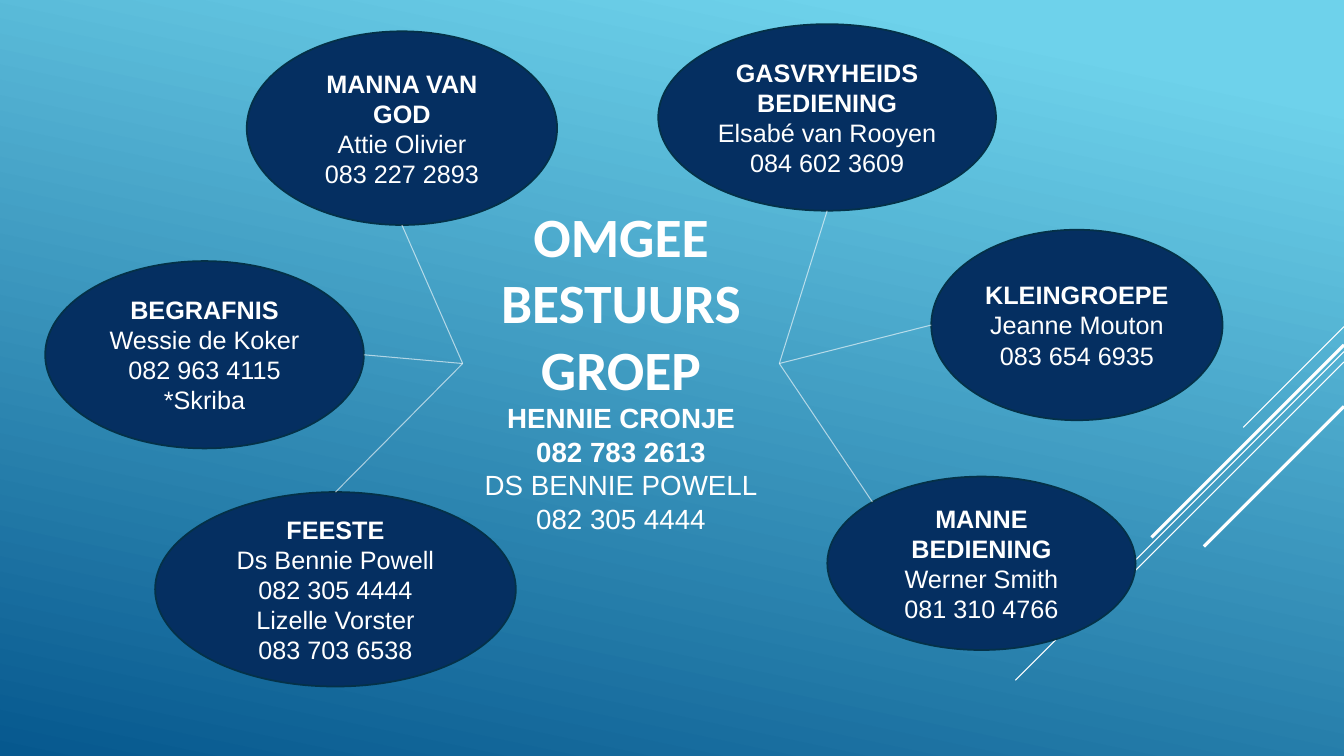
from lxml.etree import SubElement
from pptx import Presentation
from pptx.dml.color import RGBColor
from pptx.enum.shapes import MSO_CONNECTOR, MSO_SHAPE
from pptx.enum.text import MSO_ANCHOR, MSO_AUTO_SIZE, PP_ALIGN
from pptx.oxml.ns import qn
from pptx.util import Cm, Pt

SLIDE_WIDTH, SLIDE_HEIGHT = 33.87, 19.05
WHITE, NAVY, OUTLINE = "FFFFFF", "052F61", "043148"
LEFT_SIDE, RIGHT_SIDE = 1, 3
TOP, LEFT, BOTTOM, RIGHT = (0.5, 0), (0, 0.5), (0.5, 1), (1, 0.5)
TOP_LEFT = (0.146, 0.146)

DIAGONALS = [(8.23, 2.54, 0.75), (8.86, 8.28, 0.75), (9.12, 5.27, 0.75),
             (8.69, 4.85, 2.25), (10.24, 3.53, 2.25)]

TITLE_BOX = (11.66, 4.55, 7.98, 9.22)
TITLE_LINES = [
    ("OMGEE", "Calibri", 39.6, True, 47.3),
    ("BESTUURS", "Calibri", 39.6, True, 47.3),
    ("GROEP", "Calibri", 39.6, True, 47.3),
    ("HENNIE CRONJE", "Arial", 19.8, True, 23.8),
    ("082 783 2613", "Arial", 19.8, True, 23.8),
    ("DS BENNIE POWELL", "Arial", 19.8, False, 23.8),
    ("082 305 4444", "Arial", 19.8, False, 23.8),
]

MINISTRIES = [
    ((1.14, 6.58, 8.03, 4.72), ["BEGRAFNIS"],
     ["Wessie de Koker", "082 963 4115", "*Skriba"], LEFT_SIDE, RIGHT),
    ((6.22, 0.79, 7.82, 4.88), ["MANNA VAN GOD"],
     ["Attie Olivier", "083 227 2893"], LEFT_SIDE, BOTTOM),
    ((20.85, 12.01, 7.77, 4.37), ["MANNE BEDIENING"],
     ["Werner Smith 081 310 4766"], RIGHT_SIDE, TOP_LEFT),
    ((3.91, 12.4, 9.09, 4.9), ["FEESTE"],
     ["Ds Bennie Powell", "082 305 4444", "Lizelle Vorster", "083 703 6538"],
     LEFT_SIDE, TOP),
    ((23.47, 5.79, 7.34, 4.8), ["KLEINGROEPE"],
     ["Jeanne Mouton", "083 654 6935"], RIGHT_SIDE, LEFT),
    ((16.59, 0.61, 8.51, 4.7), ["GASVRYHEIDS", "BEDIENING"],
     ["Elsabé van Rooyen", "084 602 3609"], RIGHT_SIDE, BOTTOM),
]


def colour(value):
    """Turn a hex string into a colour."""
    return RGBColor.from_string(value)


def apply_format(target, values):
    """Set every attribute named in a dict of format values."""
    for name, value in values.items():
        setattr(target, name, value)


def paint_background(page):
    """Fill the page with the light-to-dark blue gradient."""
    fill = page.background.fill
    fill.gradient()
    fill.gradient_angle = 258
    for stop, position, value in zip(fill.gradient_stops, (0.1, 1), ("6ED2EB", "06588E")):
        stop.position = position
        stop.color.rgb = colour(value)


def write_lines(shape, lines):
    """Write one centred paragraph for each (text, font, size, bold, spacing)."""
    frame = shape.text_frame
    apply_format(frame, {"word_wrap": True, "auto_size": MSO_AUTO_SIZE.NONE,
                         "vertical_anchor": MSO_ANCHOR.MIDDLE})
    for index, (text, font, size, bold, spacing) in enumerate(lines):
        para = frame.add_paragraph() if index else frame.paragraphs[0]
        apply_format(para, {"alignment": PP_ALIGN.CENTER, "line_spacing": Pt(spacing),
                            "space_before": Pt(0), "space_after": Pt(0)})
        span = para.add_run()
        span.text = text
        apply_format(span.font, {"name": font, "size": Pt(size), "bold": bold})
        span.font.color.rgb = colour(WHITE)


def add_line(page, start, end, weight, opacity=100):
    """Draw a straight white line between two points in centimetres."""
    line = page.shapes.add_connector(MSO_CONNECTOR.STRAIGHT, *map(Cm, start + end))
    line.line.width = Pt(weight)
    line.line.color.rgb = colour(WHITE)
    properties = line._element.spPr
    if opacity < 100:
        alpha = SubElement(properties.find(".//" + qn("a:srgbClr")), qn("a:alpha"))
        alpha.set("val", str(opacity * 1000))
    SubElement(properties, qn("a:effectLst"))
    return line


def format_title(title):
    """Place the title placeholder and write the committee details in it."""
    apply_format(title, dict(zip(("left", "top", "width", "height"), map(Cm, TITLE_BOX))))
    title.text_frame.margin_top = Cm(0.38)
    write_lines(title, TITLE_LINES)


def add_ministry(page, box, heading, details):
    """Add a navy ellipse with a bold heading and contact details."""
    ellipse = page.shapes.add_shape(MSO_SHAPE.OVAL, *map(Cm, box))
    ellipse.shadow.inherit = False
    ellipse.fill.solid()
    ellipse.fill.fore_color.rgb = colour(NAVY)
    ellipse.line.color.rgb = colour(OUTLINE)
    ellipse.line.width = Pt(1.25)
    apply_format(ellipse.text_frame, {"margin_left": Cm(0.23), "margin_right": Cm(0.23)})
    write_lines(ellipse, [(text, "Arial", 18, text in heading, 21.5)
                          for text in heading + details])


def link_to_title(page, title, side, box, site):
    """Join a side of the title to a point on an ellipse."""
    left, top, width, height = box
    end = (left + width * site[0], top + height * site[1])
    line = add_line(page, TITLE_BOX[:2], end, 0.75, opacity=60)
    line.begin_connect(title, side)


def main():
    """Build the slide and save it."""
    deck = Presentation()
    deck.slide_width, deck.slide_height = Cm(SLIDE_WIDTH), Cm(SLIDE_HEIGHT)
    page = deck.slides.add_slide(deck.slide_layouts.get_by_name("Title Only"))
    paint_background(page)
    for top, run, weight in DIAGONALS:
        add_line(page, (SLIDE_WIDTH, top), (SLIDE_WIDTH - run, top + run), weight)
    title = page.shapes.title
    format_title(title)
    for box, heading, details, side, site in MINISTRIES:
        add_ministry(page, box, heading, details)
        link_to_title(page, title, side, box, site)
    deck.save("out.pptx")


if __name__ == "__main__":
    main()
